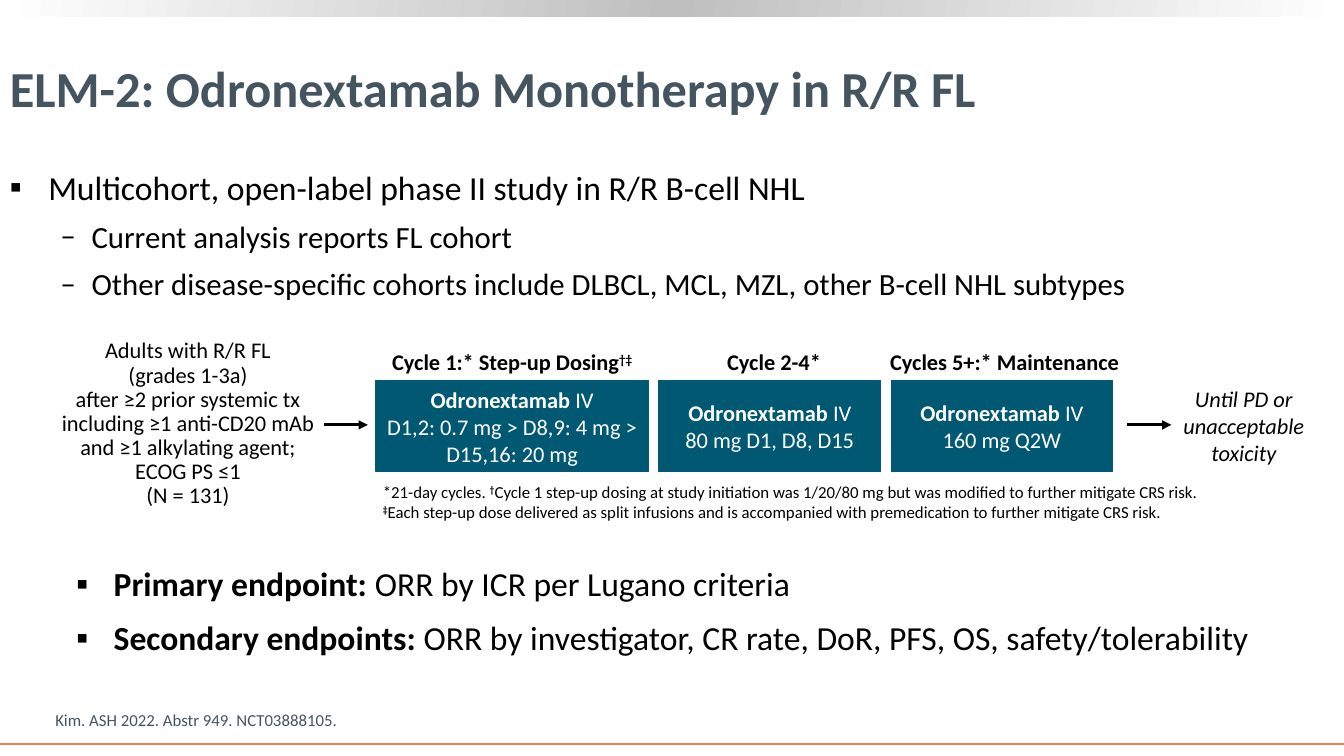
from lxml.etree import SubElement
from pptx import Presentation
from pptx.dml.color import RGBColor
from pptx.enum.shapes import MSO_CONNECTOR as Connector, MSO_SHAPE as Shape
from pptx.enum.text import MSO_ANCHOR as Anchor, PP_ALIGN as Align
from pptx.oxml import parse_xml
from pptx.oxml.ns import nsdecls, qn
from pptx.util import Pt

COLORS = {"black": "000000", "white": "FFFFFF", "slate": "455560",
          "teal": "015873", "orange": "F47D55", "silver": "BFBFBF"}
WIDTH, HEIGHT = 960, 540
FONT = "Calibri"


def rgb(name):
    """Return a named colour."""
    return RGBColor.from_string(COLORS[name])


def add_bullet(paragraph, char, margin, hang):
    """Give a paragraph a black bullet with a hanging indent."""
    props = paragraph._p.get_or_add_pPr()
    props.set("marL", str(Pt(margin)))
    props.set("indent", str(-Pt(hang)))
    color = SubElement(props, qn("a:buClr"))
    SubElement(color, qn("a:srgbClr"), val=COLORS["black"])
    SubElement(props, qn("a:buFont"), typeface=FONT)
    SubElement(props, qn("a:buChar"), char=char)


def write(paragraph, runs, size, color="black", align=Align.LEFT,
          spacing=None, bold=None, italic=None):
    """Write runs of (text, marks), where b is bold and ^ is superscript."""
    paragraph.alignment = align
    paragraph.line_spacing = spacing
    font = paragraph.font
    font.name, font.size, font.bold, font.italic = FONT, Pt(size), bold, italic
    font.color.rgb = rgb(color)
    for text, marks in runs:
        run = paragraph.add_run()
        run.text = text
        if "b" in marks:
            run.font.bold = True
        if "^" in marks:
            run._r.get_or_add_rPr().set("baseline", "30000")


def write_all(frame, paragraphs, size, **style):
    """Fill a text frame with paragraphs of one style."""
    for i, runs in enumerate(paragraphs):
        paragraph = frame.add_paragraph() if i else frame.paragraphs[0]
        write(paragraph, runs, size, **style)


def add_text(slide, box, paragraphs, size, anchor=Anchor.TOP, wrap=True, **style):
    """Add a text box in the given box."""
    frame = slide.shapes.add_textbox(*map(Pt, box)).text_frame
    frame.word_wrap = wrap
    frame.vertical_anchor = anchor
    write_all(frame, paragraphs, size, **style)


def add_rule(slide, x1, x2, y, color, weight, arrow=False):
    """Add a horizontal line, with an arrowhead on request."""
    rule = slide.shapes.add_connector(Connector.STRAIGHT, Pt(x1), Pt(y), Pt(x2), Pt(y))
    rule.line.color.rgb = rgb(color)
    rule.line.width = Pt(weight)
    if arrow:
        SubElement(rule.line._get_or_add_ln(), qn("a:tailEnd"), type="triangle")
    SubElement(rule._element.spPr, qn("a:effectLst"))


def add_frame(slide):
    """Add the gradient band on top and the rule at the bottom."""
    band = slide.shapes.add_shape(Shape.RECTANGLE, 0, 0, Pt(WIDTH), Pt(11.5))
    band.shadow.inherit = False
    band.line.fill.background()
    stops = "".join(
        f'<a:gs pos="{pos}"><a:srgbClr val="{COLORS[name]}"/></a:gs>'
        for pos, name in ((0, "white"), (50000, "silver"), (100000, "white")))
    gradient = parse_xml(f'<a:gradFill {nsdecls("a")} rotWithShape="1"><a:gsLst>{stops}'
                         '</a:gsLst><a:lin ang="11400000" scaled="0"/></a:gradFill>')
    band._element.spPr.find(qn("a:prstGeom")).addnext(gradient)
    add_rule(slide, 0, WIDTH, 531.4, "orange", 1.5)


def add_outline(slide, box, items, before, after=0):
    """Add a bulleted list of (runs, size, level, bullet, margin, hang)."""
    frame = slide.shapes.add_textbox(*map(Pt, box)).text_frame
    frame.word_wrap = True
    for i, (runs, size, level, char, margin, hang) in enumerate(items):
        paragraph = frame.add_paragraph() if i else frame.paragraphs[0]
        paragraph.level = level
        add_bullet(paragraph, char, margin, hang)
        write(paragraph, runs, size, spacing=0.9)
        paragraph.space_before = Pt(before if i else 0)
        paragraph.space_after = Pt(after)


def add_cycle(slide, box, label, label_width, label_shift, dose):
    """Add one dosing box with its heading above."""
    left, top, width, height = box
    label_left = left + (width - label_width) / 2 + label_shift
    add_text(slide, (label_left, top - 26.8, label_width, 26.6), [label], 16,
             wrap=False, bold=True, align=Align.CENTER)
    cycle = slide.shapes.add_shape(Shape.RECTANGLE, *map(Pt, box))
    cycle.shadow.inherit = False
    cycle.fill.solid()
    cycle.fill.fore_color.rgb = rgb("teal")
    cycle.line.color.rgb = rgb("teal")
    cycle.line.width = Pt(0.75)
    frame = cycle.text_frame
    frame.word_wrap = True
    frame.vertical_anchor = Anchor.MIDDLE
    write_all(frame, [[("Odronextamab ", "b"), ("IV", "")], [(dose, "")]], 16,
              color="white", align=Align.CENTER)


def add_scheme(slide, left, top):
    """Add the study flow from patients through cycles to the stop rule."""
    patients = ["Adults with R/R FL", "(grades 1-3a)",
                "after ≥2 prior systemic tx including ≥1 anti-CD20 mAb "
                "and ≥1 alkylating agent;", "ECOG PS ≤1", "(N = 131)"]
    add_text(slide, (left, top, 202.3, 129.6), [[(line, "")] for line in patients],
             16, align=Align.CENTER, spacing=0.9)
    cycles = [
        (194.4, [("Cycle 1:* Step-up Dosing", ""), ("†‡", "^")], 189.4, 0,
         "D1,2: 0.7 mg > D8,9: 4 mg > D15,16: 20 mg"),
        (158.4, [("Cycle 2-4*", "")], 82.8, 3, "80 mg D1, D8, D15"),
        (157.7, [("Cycles 5+:* Maintenance", "")], 180, 2, "160 mg Q2W"),
    ]
    x = left + 235.5
    for width, label, label_width, shift, dose in cycles:
        add_cycle(slide, (x, top + 33.1, width, 65), label, label_width, shift, dose)
        x += width + 7.7
    for start in (198, 772):
        add_rule(slide, left + start, left + start + 31.7, top + 64.5, "black", 2.25,
                 arrow=True)
    add_text(slide, (left + 801.4, top + 32.4, 108, 65.5),
             [[("Until PD or", "")], [("unacceptable toxicity", "")]], 16,
             italic=True, align=Align.CENTER)
    note = [("*21-day cycles. ", ""), ("†", "b^"),
            ("Cycle 1 step-up dosing at study initiation was 1/20/80 mg but was "
             "modified to further mitigate CRS risk. ", ""), ("‡", "b^"),
            ("Each step-up dose delivered as split infusions and is accompanied with "
             "premedication to further mitigate CRS risk.", "")]
    add_text(slide, (left + 233.3, top + 101.5, 614.2, 36), [note], 12)


def build_slide(slide):
    """Place all regions of the study slide."""
    add_frame(slide)
    add_text(slide, (0, 18.7, 856, 87.1),
             [[("ELM-2: Odronextamab Monotherapy in R/R FL", "")]], 36,
             anchor=Anchor.MIDDLE, color="slate", bold=True)
    design = [
        ([("Multicohort, open-label phase II study in R/R B-cell NHL", "")],
         24, 0, "▪", 27.4, 27.4),
        ([("Current analysis reports FL cohort", "")], 22, 1, "‒", 58.3, 22.3),
        ([("Other disease-specific cohorts include DLBCL, MCL, MZL, "
           "other B-cell NHL subtypes", "")], 22, 1, "‒", 58.3, 22.3),
    ]
    add_outline(slide, (0, 118.8, 856.8, 366.5), design, before=10)
    add_scheme(slide, 33.1, 239)
    endpoints = [("Primary endpoint: ", "ORR by ICR per Lugano criteria"),
                 ("Secondary endpoints: ",
                  "ORR by investigator, CR rate, DoR, PFS, OS, safety/tolerability")]
    add_outline(slide, (47.5, 401.8, 869.8, 97.9),
                [([(name, "b"), (measure, "")], 24, 0, "▪", 26.6, 26.6)
                 for name, measure in endpoints], before=6, after=7)
    add_text(slide, (32.4, 503.3, 618.5, 21.6),
             [[("Kim. ASH 2022. Abstr 949. NCT03888105.", "")]], 12,
             anchor=Anchor.BOTTOM, color="slate")


def main():
    """Build and save the deck."""
    deck = Presentation()
    deck.slide_width, deck.slide_height = Pt(WIDTH), Pt(HEIGHT)
    build_slide(deck.slides.add_slide(deck.slide_layouts[6]))
    deck.save("out.pptx")


if __name__ == "__main__":
    main()
